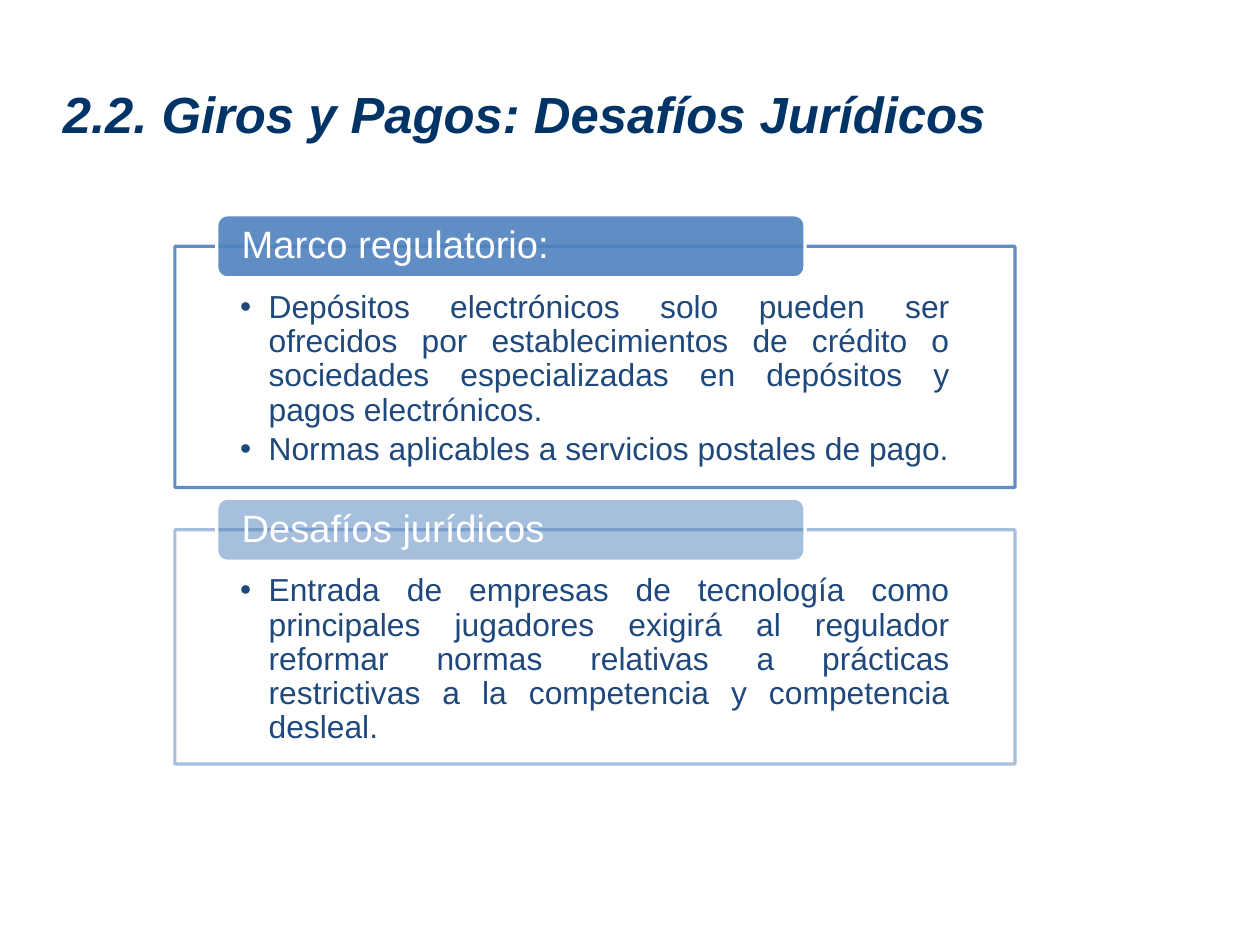
from lxml.etree import SubElement
from pptx import Presentation
from pptx.dml.color import RGBColor
from pptx.enum.shapes import MSO_SHAPE as SHAPE
from pptx.enum.text import MSO_ANCHOR as ANCHOR, PP_ALIGN as ALIGN
from pptx.oxml.ns import qn
from pptx.util import Inches, Pt

COLORS = {"title": "003366", "blue": "4F81BD", "body": "1F497D", "white": "FFFFFF"}
CM_PER_INCH = 2.54

SECTIONS = [
    (1.88, 2.11, 90, "Marco regulatorio:", [
        "Depósitos electrónicos solo pueden ser ofrecidos por establecimientos de crédito "
        "o sociedades especializadas en depósitos y pagos electrónicos.",
        "Normas aplicables a servicios postales de pago.",
    ]),
    (4.36, 2.05, 50, "Desafíos jurídicos", [
        "Entrada de empresas de tecnología como principales jugadores exigirá al regulador "
        "reformar normas relativas a prácticas restrictivas a la competencia y "
        "competencia desleal.",
    ]),
]


def rgb(name):
    return RGBColor.from_string(COLORS[name])


def set_alpha(sp, tag, percent):
    color = sp._element.spPr.find(qn(tag)).find(".//" + qn("a:srgbClr"))
    SubElement(color, qn("a:alpha"), val=str(percent * 1000))


def set_insets(tf, left, top, right, bottom):
    tf.margin_left, tf.margin_top = Inches(left), Inches(top)
    tf.margin_right, tf.margin_bottom = Inches(right), Inches(bottom)
    tf.word_wrap = True


def style(p, size, color, align=ALIGN.LEFT):
    p.alignment = align
    p.line_spacing = 0.9
    for r in p.runs:
        r.font.name = "Arial"
        r.font.size = Pt(size)
        r.font.color.rgb = rgb(color)


def add_bullet(p):
    pPr = p._p.get_or_add_pPr()
    pPr.set("marL", str(Inches(0.25)))
    pPr.set("indent", str(-Inches(0.25)))
    SubElement(pPr, qn("a:buFont"), typeface="Arial")
    SubElement(pPr, qn("a:buChar"), char="•")


def add_box(s, kind, left, top, width, height, fill, line, alpha):
    sp = s.shapes.add_shape(kind, Inches(left), Inches(top), Inches(width), Inches(height))
    sp.shadow.inherit = False
    sp.fill.solid()
    sp.fill.fore_color.rgb = rgb(fill)
    sp.line.color.rgb = rgb(line)
    sp.line.width = Pt(2)
    set_alpha(sp, "a:solidFill", alpha)
    return sp


def add_title(s, left, top, width, height):
    sp = s.shapes.title
    sp.left, sp.top = Inches(left), Inches(top)
    sp.width, sp.height = Inches(width), Inches(height)
    tf = sp.text_frame
    tf.text = "2.2. Giros y Pagos: Desafíos Jurídicos"
    tf.vertical_anchor = ANCHOR.MIDDLE
    set_insets(tf, 0, 0, 0, 0)
    p = tf.paragraphs[0]
    style(p, 32, "title")
    p.runs[0].font.bold = p.runs[0].font.italic = True


def add_section(s, left, top, width, height, alpha, heading, items):
    tab_height = 0.55
    frame = add_box(s, SHAPE.RECTANGLE, left, top + tab_height / 2, width, height,
                    "white", "blue", 90)
    set_alpha(frame, "a:ln", alpha)
    tf = frame.text_frame
    tf.vertical_anchor = ANCHOR.TOP
    set_insets(tf, 0.57, 0.39, 0.57, 0.16)
    tf.text = "\n".join(items)
    for p in tf.paragraphs:
        style(p, 20, "body", ALIGN.JUSTIFY)
        p.space_after = Pt(3)
        add_bullet(p)

    tab = add_box(s, SHAPE.ROUNDED_RECTANGLE, left + width * 0.05, top, width * 0.7,
                  tab_height, "blue", "white", alpha)
    tf = tab.text_frame
    tf.text = heading
    tf.vertical_anchor = ANCHOR.MIDDLE
    set_insets(tf, 0.19, 0, 0.19, 0)
    style(tf.paragraphs[0], 24, "white")


def main():
    prs = Presentation()
    prs.slide_width = Inches(28 / CM_PER_INCH)
    prs.slide_height = Inches(21 / CM_PER_INCH)
    s = prs.slides.add_slide(prs.slide_layouts[5])
    add_title(s, 0.55, 0.33, 9.92, 1.38)
    for top, height, alpha, heading, items in SECTIONS:
        add_section(s, 1.53, top, 7.35, height, alpha, heading, items)
    prs.save("out.pptx")


if __name__ == "__main__":
    main()
